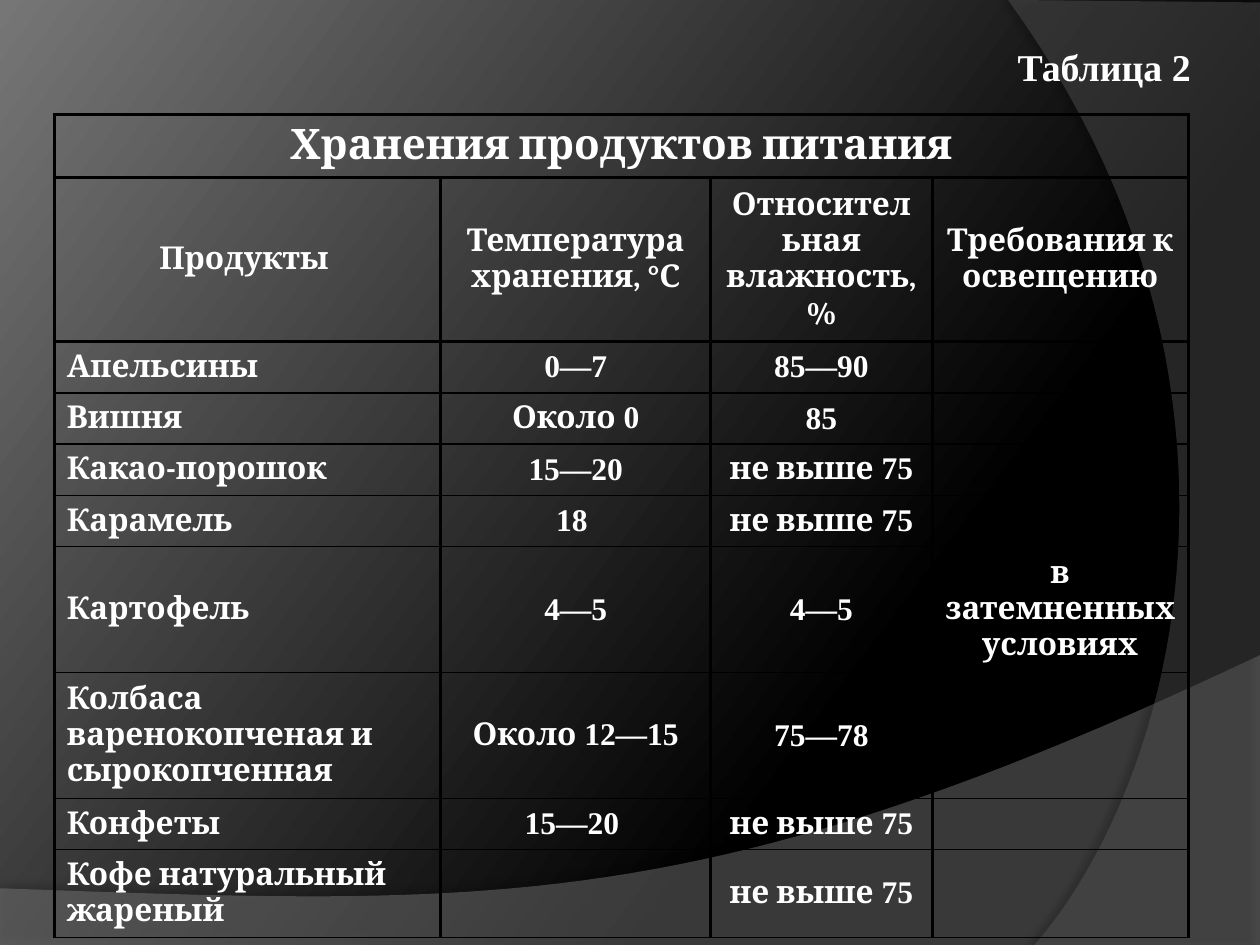
from dataclasses import dataclass

from lxml import etree
from pptx import Presentation
from pptx.dml.color import RGBColor
from pptx.enum.text import MSO_ANCHOR, PP_ALIGN
from pptx.oxml.ns import qn
from pptx.util import Pt

LEFT, CENTER, RIGHT = PP_ALIGN.LEFT, PP_ALIGN.CENTER, PP_ALIGN.RIGHT
MIDDLE = MSO_ANCHOR.MIDDLE
PX = 9144  # EMU in one px, 100 px to the inch
CURVE_STEPS = 48


@dataclass(frozen=True)
class Theme:
    text: str = "FFFFFF"
    line: str = "000000"
    dark: str = "000000"
    light: str = "767676"
    wave: str = "7F7F7F"
    side: str = "5E5E5E"
    font: str = "Cambria"
    number_font: str = "Times New Roman"
    title: float = 21.6
    caption: float = 24
    body: float = 18


THEME = Theme()
SLIDE = (1000, 750)
TITLE_BOX = (50, 30, 900, 46)
TABLE_BOX = (43, 91, 900, 651)
WAVE_BOX = (0, 520, 1000, 230)
SIDE_BOX = (800, 0, 200, 750)

COLUMNS = [307, 214, 176, 203]
ROWS = [50, 130, 41, 40, 40, 40, 100, 100, 40, 70]
CAPTION = "Хранения продуктов питания"
HEADERS = ["Продукты ", "Температура хранения, °С",
           "Относительная влажность,%", "Требования к освещению"]
# "|" parts the words from the figures, which have their own font.
PRODUCTS = [
    ["Апельсины", "0—7", "85—90", ""],
    ["Вишня", "Около| 0", "85", ""],
    ["Какао-порошок", "15—20", "не выше| 75", ""],
    ["Карамель", "18 ", "не выше| 75", ""],
    ["Картофель", "4—5", "4—5", "в затемненных условиях"],
    ["Колбаса варенокопченая и сырокопченная", "Около| 12—15", "75—78", ""],
    ["Конфеты", "15—20 ", "не выше| 75", ""],
    ["Кофе натуральный жареный", "", "не выше| 75", ""],
]


def emu(box):
    return [v * PX for v in box]


def add_color(parent, color, alpha=None):
    clr = etree.SubElement(parent, qn("a:srgbClr"), val=color)
    if alpha is not None:
        etree.SubElement(clr, qn("a:alpha"), val=str(alpha * 1000))


def write_text(p, text, size, align):
    p.alignment = align
    for part in filter(None, text.split("|")):
        r = p.add_run()
        r.text = part
        has_digit = any(ch.isdigit() for ch in part)
        font = {"name": THEME.number_font if has_digit else THEME.font,
                "size": Pt(size), "bold": True}
        for name, value in font.items():
            setattr(r.font, name, value)
        r.font.color.rgb = RGBColor.from_string(THEME.text)


def set_background(s):
    fill = s.background.fill
    fill.gradient()
    fill.gradient_angle = 143
    stops = [(0.3, THEME.dark), (1.0, THEME.light)]
    for stop, (position, color) in zip(fill.gradient_stops, stops):
        stop.position = position
        stop.color.rgb = RGBColor.from_string(color)


def bezier(p0, p1, p2, p3):
    """Points along a cubic curve, without its first point."""
    points = []
    for i in range(1, CURVE_STEPS + 1):
        t = i / CURVE_STEPS
        u = 1 - t
        points.append(tuple(
            u**3 * a + 3 * u * u * t * b + 3 * u * t * t * c + t**3 * d
            for a, b, c, d in zip(p0, p1, p2, p3)))
    return points


def add_backdrop(s, box, points, color, alpha, shadow):
    """Translucent outline behind everything; shadow is alpha, blur, distance, angle."""
    x, y = box[:2]
    start, *rest = [((x + dx) * PX, (y + dy) * PX) for dx, dy in points]
    builder = s.shapes.build_freeform(*start)
    builder.add_line_segments(rest, close=True)
    sp = builder.convert_to_shape()
    sp.line.fill.background()
    sp.fill.solid()
    sp.fill.fore_color.rgb = RGBColor.from_string(color)
    sp.shadow.inherit = False
    props = sp.element.spPr
    fill_color = props.find(qn("a:solidFill")).find(qn("a:srgbClr"))
    etree.SubElement(fill_color, qn("a:alpha"), val=str(alpha * 1000))
    shade, blur, distance, angle = shadow
    outer = etree.SubElement(
        props.find(qn("a:effectLst")), qn("a:outerShdw"), blurRad=str(Pt(blur)),
        dist=str(Pt(distance)), dir=str(angle * 60000), algn="ctr", rotWithShape="0")
    add_color(outer, THEME.dark, shade)
    return sp


def add_wave(s, box):
    w, h = box[2:]
    curve = bezier((w, 0), (559, 209), (391, 199), (0, 185))
    return add_backdrop(s, box, [(0, h), (w, h), (w, 0), *curve],
                        THEME.wave, 45, (35, 4, 3.5, 270))


def add_side(s, box):
    w, h = box[2:]
    curve = bezier((21, h), (135, 619), (218, 300), (0, 0))
    return add_backdrop(s, box, [(w, 2), (w, h), (21, h), *curve],
                        THEME.side, 40, (45, 4, 4, 180))


def place_title(s, box, text):
    sp = s.shapes.title
    sp.left, sp.top, sp.width, sp.height = emu(box)
    tf = sp.text_frame
    tf.vertical_anchor = MIDDLE
    for side in ("left", "top", "right", "bottom"):
        setattr(tf, f"margin_{side}", 5 * PX)
    write_text(tf.paragraphs[0], text, THEME.title, RIGHT)


def set_borders(cell, widths):
    props = cell._tc.get_or_add_tcPr()
    for i, (side, width) in enumerate(zip("LRTB", widths)):
        ln = etree.Element(qn(f"a:ln{side}"), w=str(Pt(width)))
        add_color(etree.SubElement(ln, qn("a:solidFill")), THEME.line)
        props.insert(i, ln)


def add_storage_table(s, box):
    table = s.shapes.add_table(len(ROWS), len(COLUMNS), *emu(box)).table
    table.first_row = table.horz_banding = False
    for column, width in zip(table.columns, COLUMNS):
        column.width = width * PX
    for row, height in zip(table.rows, ROWS):
        row.height = height * PX
    table.cell(0, 0).merge(table.cell(0, len(COLUMNS) - 1))
    for i, texts in enumerate([[CAPTION, "", "", ""], HEADERS, *PRODUCTS]):
        for j, text in enumerate(texts):
            cell = table.cell(i, j)
            cell.fill.background()
            cell.vertical_anchor = MIDDLE
            set_borders(cell, (2, 2, 2 if i < 3 else 1, 2 if i < 2 else 1))
            write_text(cell.text_frame.paragraphs[0], text,
                       THEME.caption if i == 0 else THEME.body,
                       LEFT if i > 1 and j == 0 else CENTER)


def main():
    prs = Presentation()
    prs.slide_width, prs.slide_height = emu(SLIDE)
    s = prs.slides.add_slide(prs.slide_layouts[5])
    set_background(s)
    backdrops = [add_wave(s, WAVE_BOX), add_side(s, SIDE_BOX)]
    for sp in backdrops:
        s.shapes.title.element.addprevious(sp.element)
    place_title(s, TITLE_BOX, "Таблица 2")
    add_storage_table(s, TABLE_BOX)
    prs.save("out.pptx")


if __name__ == "__main__":
    main()
